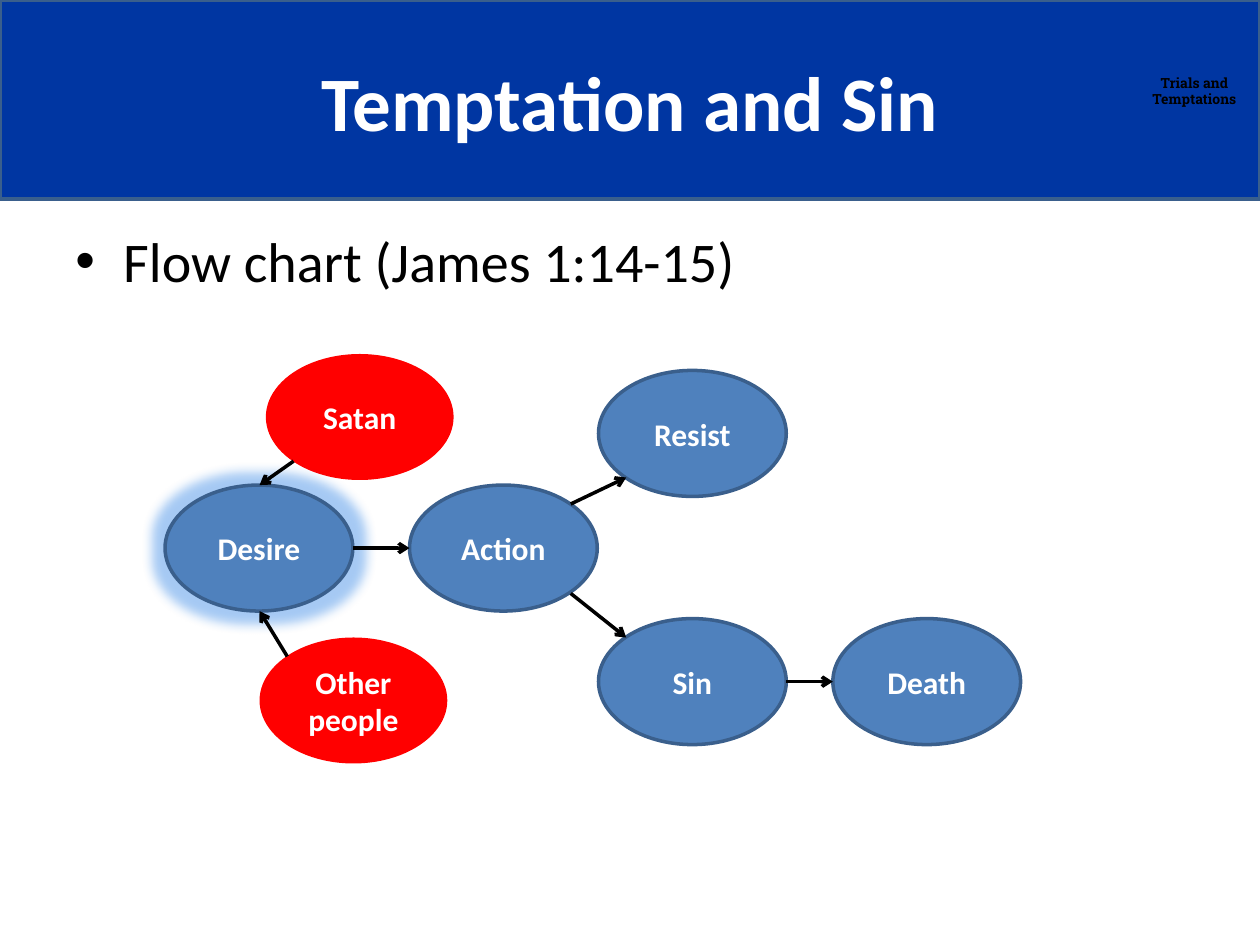
from lxml.etree import SubElement
from pptx import Presentation
from pptx.dml.color import RGBColor
from pptx.enum.shapes import MSO_CONNECTOR as LINK, MSO_SHAPE as SHAPE
from pptx.enum.text import MSO_ANCHOR as ANCHOR, PP_ALIGN as ALIGN
from pptx.oxml.ns import qn
from pptx.util import Inches, Pt


def color(value):
    return RGBColor.from_string(value)


def write(target, text, size=18, font="Calibri", ink="FFFFFF", bold=True,
          align=ALIGN.CENTER, anchor=ANCHOR.MIDDLE, bullet=None):
    frame = target.text_frame
    frame.word_wrap = True
    frame.vertical_anchor = anchor
    paragraph = frame.paragraphs[0]
    paragraph.alignment = align
    if bullet:
        properties = paragraph._p.get_or_add_pPr()
        properties.set("marL", str(Inches(0.38)))
        properties.set("indent", str(Inches(-0.38)))
        SubElement(properties, qn("a:buFont"), typeface="Arial")
        SubElement(properties, qn("a:buChar"), char=bullet)
    for number, line in enumerate(text.split("\n")):
        if number:
            paragraph.add_line_break()
        run = paragraph.add_run()
        run.text = line
        run.font.name = font
        run.font.size = Pt(size)
        run.font.bold = bold
        run.font.color.rgb = color(ink)


deck = Presentation()
deck.slide_width, deck.slide_height = Inches(10), Inches(7.5)
slide = deck.slides.add_slide(deck.slide_layouts[6])
shapes = slide.shapes

banner = shapes.add_shape(SHAPE.RECTANGLE, 0, 0, Inches(10), Inches(1.58))
banner.shadow.inherit = False
banner.fill.solid()
banner.fill.fore_color.rgb = color("0036A2")
banner.line.color.rgb = color("3A5F8C")
banner.line.width = Pt(2)

series = shapes.add_textbox(Inches(8.93), Inches(0.54), Inches(1.1), Inches(0.37))
write(series, "Trials and\nTemptations", size=8, font="Roboto Slab", ink="000000",
      anchor=ANCHOR.TOP)

title = shapes.add_textbox(0, Inches(0.17), Inches(10), Inches(1.25))
write(title, "Temptation and Sin", size=44)

steps = [
    ("Satan", 2.11, 2.81, "FF0000"),
    ("Other people", 2.06, 5.06, "FF0000"),
    ("Desire", 1.31, 3.85, "4F81BD"),
    ("Action", 3.25, 3.85, "4F81BD"),
    ("Sin", 4.75, 4.91, "4F81BD"),
    ("Resist", 4.75, 2.94, "4F81BD"),
    ("Death", 6.61, 4.91, "4F81BD"),
]
for label, left, top, fill in steps:
    step = shapes.add_shape(SHAPE.OVAL, Inches(left), Inches(top), Inches(1.49), Inches(1))
    step.shadow.inherit = False
    step.fill.solid()
    step.fill.fore_color.rgb = color(fill)
    if fill == "FF0000":
        step.line.fill.background()
    else:
        step.line.color.rgb = color("3A5F8C")
        step.line.width = Pt(2)
    write(step, label)
    if label == "Desire":
        effects = step._element.spPr.find(qn("a:effectLst"))
        glow = SubElement(effects, qn("a:glow"), rad=str(Inches(0.18)))
        tint = SubElement(glow, qn("a:srgbClr"), val="207AE4")
        SubElement(tint, qn("a:alpha"), val="40000")

flows = [
    (2.33, 3.66, 2.06, 3.85),
    (2.28, 5.21, 2.06, 4.85),
    (2.8, 4.35, 3.25, 4.35),
    (4.53, 4, 4.97, 3.79),
    (4.53, 4.71, 4.97, 5.06),
    (6.24, 5.41, 6.61, 5.41),
]
for ends in flows:
    flow = shapes.add_connector(LINK.STRAIGHT, *map(Inches, ends))
    flow.line.color.rgb = color("000000")
    flow.line.width = Pt(2)
    outline = flow._element.spPr
    SubElement(outline.find(qn("a:ln")), qn("a:tailEnd"), type="arrow")
    SubElement(outline, qn("a:effectLst"))

topic = shapes.add_textbox(Inches(0.5), Inches(1.75), Inches(9), Inches(2.47))
write(topic, "Flow chart (James 1:14-15)", size=32, ink="000000", bold=False,
      align=ALIGN.LEFT, anchor=ANCHOR.TOP, bullet="•")

deck.save("out.pptx")
